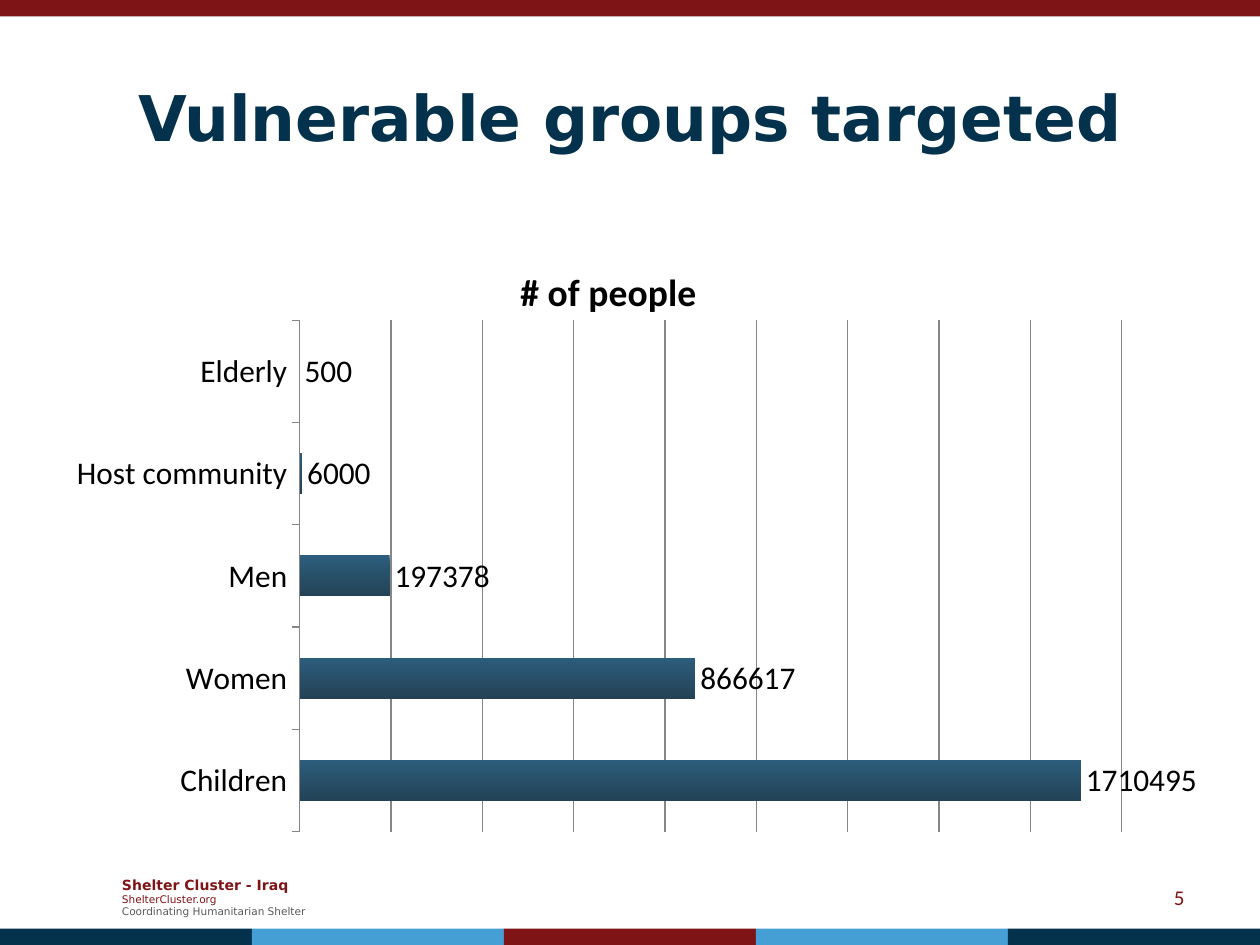
import pptx
import pptx.chart.data
import pptx.dml.color
import pptx.enum.chart
import pptx.enum.shapes
import pptx.enum.text
import pptx.oxml
import pptx.oxml.ns
import pptx.util

W, H = 10, 7.5
NAVY, BLUE, RED, GREY = "04314C", "459FD5", "7F1416", "595959"
LINE, BLACK = "868686", "000000"
ALIGN = pptx.enum.text.PP_ALIGN
qn = pptx.oxml.ns.qn


def rgb(value):
    return pptx.dml.color.RGBColor.from_string(value)


def inches(box):
    return [pptx.util.Inches(v) for v in box]


def style(font, size, color, name="Calibri", bold=False):
    font.size, font.name, font.bold = pptx.util.Pt(size), name, bold
    font.color.rgb = rgb(color)


def add_text(p, text, align=ALIGN.LEFT, **font):
    p.alignment = align
    r = p.add_run()
    r.text = text
    style(r.font, **font)


def middle_frame(sp):
    tf = sp.text_frame
    tf.word_wrap = True
    tf.vertical_anchor = pptx.enum.text.MSO_ANCHOR.MIDDLE
    return tf


def add_bar(s, box, color):
    sp = s.shapes.add_shape(pptx.enum.shapes.MSO_SHAPE.RECTANGLE, *inches(box))
    sp.shadow.inherit = False
    sp.fill.solid()
    sp.fill.fore_color.rgb = rgb(color)
    sp.line.fill.background()


def add_bands(s, thickness):
    """Full-width band at the top, five-colour band at the bottom."""
    add_bar(s, (0, 0, W, thickness), RED)
    colors = [NAVY, BLUE, RED, BLUE, NAVY]
    step = W / len(colors)
    for i, color in enumerate(colors):
        add_bar(s, (i * step, H - thickness, step, thickness), color)


def add_title(s, box, text):
    sp = s.shapes.title
    sp.left, sp.top, sp.width, sp.height = inches(box)
    add_text(middle_frame(sp).paragraphs[0], text, ALIGN.CENTER,
             size=36, color=NAVY, name="DejaVu Sans", bold=True)


def add_footer(s, box, number):
    left, top, width, height = box
    tf = middle_frame(s.shapes.add_textbox(*inches((left, top, 0.25 * width, height))))
    lines = [("Shelter Cluster - Iraq", 8, RED, True),
             ("ShelterCluster.org", 6, RED, False),
             ("Coordinating Humanitarian Shelter", 6, GREY, False)]
    for i, (text, size, color, bold) in enumerate(lines):
        p = tf.add_paragraph() if i else tf.paragraphs[0]
        add_text(p, text, size=size, color=color, name="DejaVu Sans", bold=bold)
    number_box = (left + 0.73 * width, top, 0.27 * width, height)
    tf = middle_frame(s.shapes.add_textbox(*inches(number_box)))
    add_text(tf.paragraphs[0], number, ALIGN.RIGHT, size=12, color=RED)


def set_layout(parent, index, **shares):
    """Place a chart part by shares of the chart's size."""
    old = parent.find(qn("c:layout"))
    if old is not None:
        parent.remove(old)
    target = '<c:layoutTarget val="inner"/>' if "w" in shares else ""
    modes = "".join(f'<c:{k}Mode val="edge"/>' for k in "xy")
    values = "".join(f'<c:{k} val="{v}"/>' for k, v in shares.items())
    parent.insert(index, pptx.oxml.parse_xml(
        f'<c:layout {pptx.oxml.ns.nsdecls("c")}><c:manualLayout>'
        f'{target}{modes}{values}</c:manualLayout></c:layout>'))


def add_people_chart(s, box):
    data = pptx.chart.data.CategoryChartData()
    data.categories = ["Children", "Women", "Men", "Host community", "Elderly"]
    data.add_series("# of people", [1710495, 866617, 197378, 6000, 500])
    kind = pptx.enum.chart.XL_CHART_TYPE.BAR_CLUSTERED
    chart = s.shapes.add_chart(kind, *inches(box), data).chart
    style(chart.font, 18, BLACK)
    chart.has_legend = False
    chart.has_title = True
    add_text(chart.chart_title.text_frame.paragraphs[0], "# of people",
             ALIGN.CENTER, size=21.6, color=BLACK, bold=True)
    chart.chart_title.include_in_layout = False
    set_layout(chart.element.find(".//" + qn("c:title")), 1, x=0.4, y=0.06)
    set_layout(chart.element.find(".//" + qn("c:plotArea")), 0,
               x=0.21, y=0.16, w=0.73, h=0.82)

    plot = chart.plots[0]
    plot.gap_width = 150
    plot.vary_by_categories = False
    plot.has_data_labels = True
    labels = plot.data_labels
    labels.show_value = True
    labels.position = pptx.enum.chart.XL_LABEL_POSITION.OUTSIDE_END
    style(labels.font, 18, BLACK)
    fill = plot.series[0].format.fill
    fill.gradient()
    fill.gradient_angle = 270
    for stop, color in zip(fill.gradient_stops, ["2C5D7C", "244256"]):
        stop.color.rgb = rgb(color)

    values, cats = chart.value_axis, chart.category_axis
    values.minimum_scale, values.maximum_scale = 0, 1800000
    values.major_unit = 200000
    values.visible = False
    values.has_major_gridlines = True
    cats.major_tick_mark = pptx.enum.chart.XL_TICK_MARK.OUTSIDE
    for line in (values.major_gridlines.format.line, cats.format.line):
        line.color.rgb = rgb(LINE)
        line.width = pptx.util.Pt(0.75)


def main():
    prs = pptx.Presentation()
    prs.slide_width, prs.slide_height = inches((W, H))
    s = prs.slides.add_slide(prs.slide_layouts[5])
    margin = 0.05 * W
    add_bands(s, 0.13)
    add_title(s, (margin, 0.04 * H, W - 2 * margin, 1.25), "Vulnerable groups targeted")
    add_people_chart(s, (margin, 1.75, W - 2 * margin, 4.95))
    add_footer(s, (0.87, 6.9, W - margin - 0.87, 0.44), "5")
    prs.save("out.pptx")


if __name__ == "__main__":
    main()
